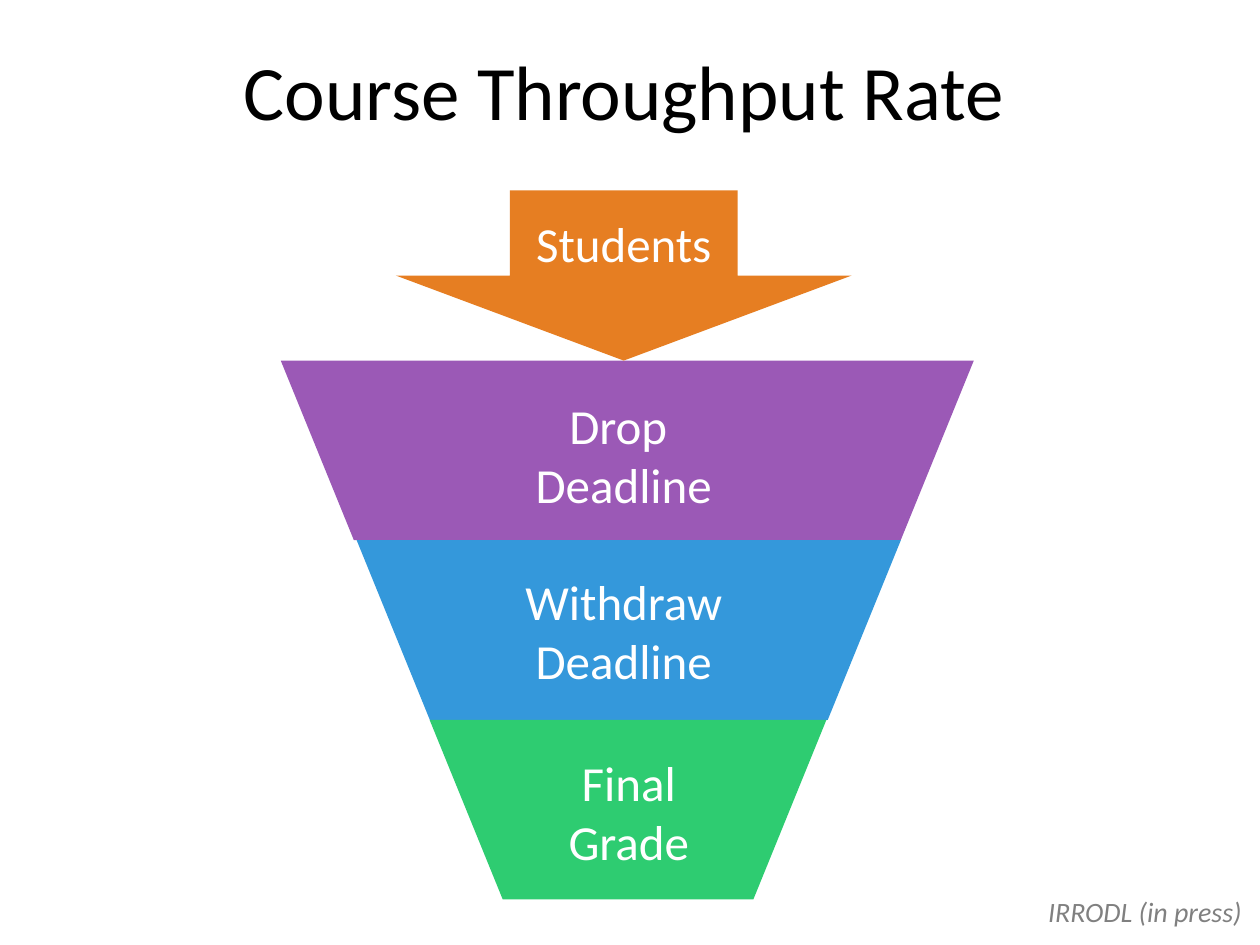
from dataclasses import dataclass

from pptx import Presentation
from pptx.dml.color import RGBColor
from pptx.enum.shapes import MSO_SHAPE as Preset
from pptx.enum.text import MSO_ANCHOR as Anchor, PP_ALIGN as Align
from pptx.util import Cm, Pt

BLACK = RGBColor(0x00, 0x00, 0x00)
GREY = RGBColor(0x80, 0x80, 0x80)
WHITE = RGBColor(0xFF, 0xFF, 0xFF)
ORANGE = RGBColor(0xE6, 0x7E, 0x22)
PURPLE = RGBColor(0x9B, 0x59, 0xB6)
BLUE = RGBColor(0x34, 0x98, 0xDB)
GREEN = RGBColor(0x2E, 0xCC, 0x71)

FUNNEL_TOP = 7.27
STAGE_HEIGHT = 3.62
STAGE_SLANT = 0.407
LABEL_WIDTH = 6.35


@dataclass(frozen=True)
class Frame:
    """Left, top, width and height in centimetres."""
    left: float
    top: float
    width: float
    height: float

    def lengths(self) -> tuple:
        return Cm(self.left), Cm(self.top), Cm(self.width), Cm(self.height)


@dataclass(frozen=True)
class Stage:
    lines: tuple[str, ...]
    color: RGBColor
    left: float
    width: float
    label_left: float
    label_top: float


STAGES = (
    Stage(("Drop ", "Deadline"), PURPLE, 5.66, 13.97, 9.4, 7.85),
    Stage(("Withdraw", "Deadline"), BLUE, 7.19, 10.97, 9.4, 11.4),
    Stage(("Final", "Grade"), GREEN, 8.66, 8, 9.5, 15.04),
)


def add_text(page, frame: Frame, lines: tuple[str, ...], size: float,
             color: RGBColor, align=Align.CENTER, anchor=Anchor.TOP,
             wrap: bool = True, italic: bool = False) -> None:
    box = page.shapes.add_textbox(*frame.lengths())
    box.text_frame.word_wrap = wrap
    box.text_frame.vertical_anchor = anchor
    para = box.text_frame.paragraphs[0]
    para.alignment = align
    for index, line in enumerate(lines):
        if index:
            para.add_line_break()
        span = para.add_run()
        span.text = line
        span.font.name = "Calibri"
        span.font.size = Pt(size)
        span.font.italic = italic
        span.font.color.rgb = color


def add_block(page, preset: Preset, frame: Frame, color: RGBColor):
    block = page.shapes.add_shape(preset, *frame.lengths())
    block.shadow.inherit = False
    block.fill.solid()
    block.fill.fore_color.rgb = color
    block.line.fill.background()
    return block


def main() -> None:
    deck = Presentation()
    deck.slide_width, deck.slide_height = Cm(25.4), Cm(19.05)
    page = deck.slides.add_slide(deck.slide_layouts[6])

    # Title and source note
    add_text(page, Frame(1.37, -0.23, 22.43, 4.09),
             ("Course Throughput Rate",), 44, BLACK, anchor=Anchor.MIDDLE)
    add_text(page, Frame(20.88, 17.91, 4.6, 0.94), ("IRRODL (in press)",),
             16, GREY, align=Align.LEFT, wrap=False, italic=True)

    # Funnel stages, wide side up
    for index, stage in enumerate(STAGES):
        top = FUNNEL_TOP + index * STAGE_HEIGHT
        block = add_block(page, Preset.TRAPEZOID,
                          Frame(stage.left, top, stage.width, STAGE_HEIGHT),
                          stage.color)
        block.adjustments[0] = STAGE_SLANT
        block.rotation = 180

    # Stage labels
    for stage in STAGES:
        add_text(page, Frame(stage.label_left, stage.label_top, LABEL_WIDTH, 2.65),
                 stage.lines, 28, WHITE)

    # Arrow feeding the funnel
    add_block(page, Preset.DOWN_ARROW, Frame(7.98, 3.84, 9.19, 3.43), ORANGE)
    add_text(page, Frame(9.4, 4.17, LABEL_WIDTH, 1.45), ("Students",), 28, WHITE)

    deck.save("out.pptx")


if __name__ == "__main__":
    main()
